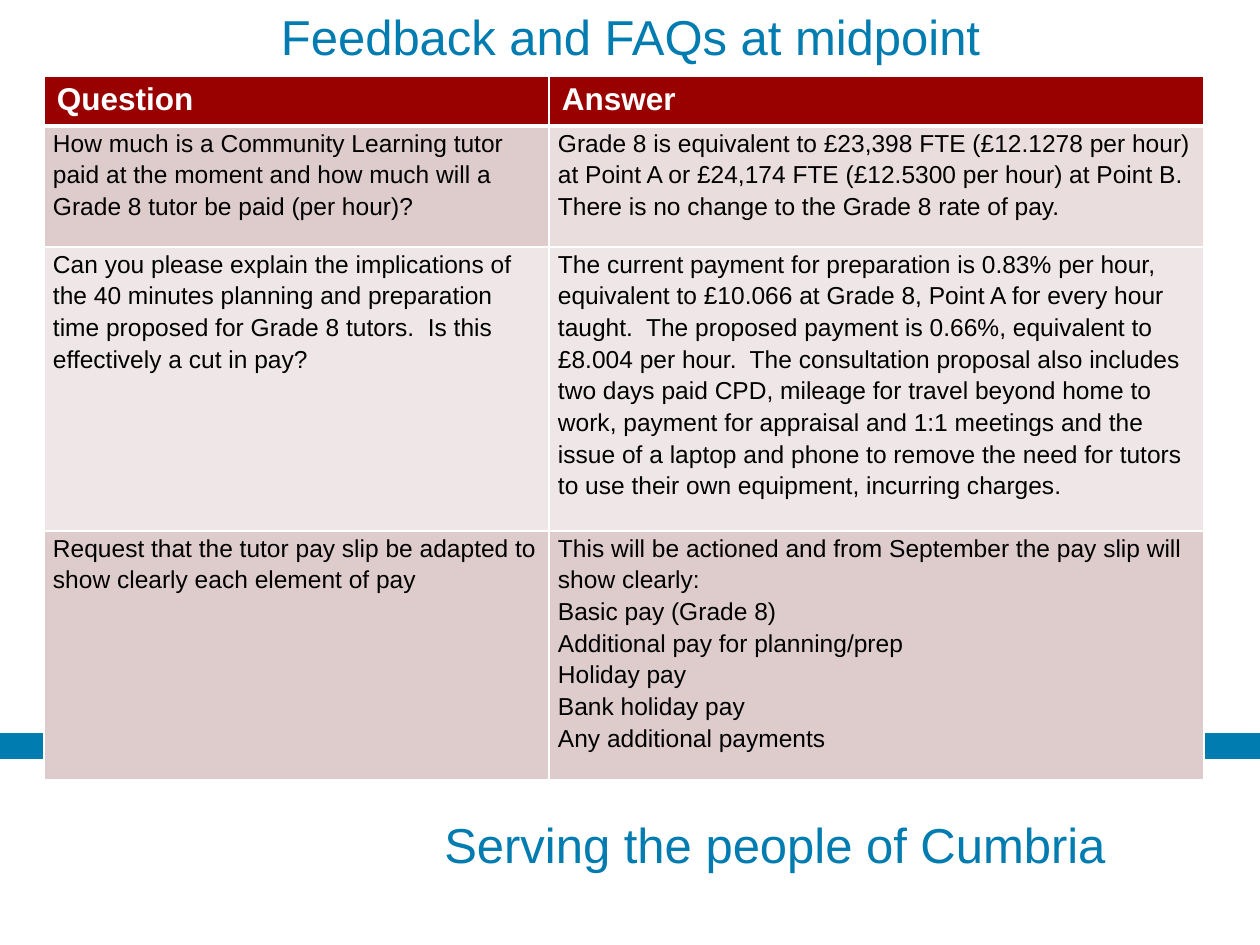
from dataclasses import dataclass

from lxml.etree import SubElement
from pptx import Presentation
from pptx.dml.color import RGBColor
from pptx.enum.shapes import MSO_CONNECTOR as Connector
from pptx.enum.text import MSO_ANCHOR as Anchor, PP_ALIGN as Align
from pptx.oxml.ns import qn
from pptx.util import Emu, Pt

# Content
TITLE = "Feedback and FAQs at midpoint"
STRAPLINE = "Serving the people of Cumbria"
HEADINGS = ("Question", "Answer")
FAQS = [
    (["How much is a Community Learning tutor paid at the moment and how much "
      "will a Grade 8 tutor be paid (per hour)?"],
     ["Grade 8 is equivalent to £23,398 FTE (£12.1278 per hour) at Point A or "
      "£24,174 FTE (£12.5300 per hour) at Point B.  There is no change to the "
      "Grade 8 rate of pay."]),
    (["Can you please explain the implications of the 40 minutes planning and "
      "preparation time proposed for Grade 8 tutors.  Is this effectively a cut in pay?"],
     ["The current payment for preparation is 0.83% per hour, equivalent to "
      "£10.066 at Grade 8, Point A for every hour taught.  The proposed payment "
      "is 0.66%, equivalent to £8.004 per hour.  The consultation proposal also "
      "includes two days paid CPD, mileage for travel beyond home to work, payment "
      "for appraisal and 1:1 meetings and the issue of a laptop and phone to remove "
      "the need for tutors to use their own equipment, incurring charges."]),
    (["Request that the tutor pay slip be adapted to show clearly each element of pay"],
     ["This will be actioned and from September the pay slip will show clearly:",
      "Basic pay (Grade 8)", "Additional pay for planning/prep", "Holiday pay",
      "Bank holiday pay", "Any additional payments"]),
]


@dataclass(frozen=True)
class Theme:
    font: str = "Arial"
    blue: str = "007CB0"
    white: str = "FFFFFF"
    black: str = "000000"
    header: str = "990000"
    rows: tuple = (("DECCCC", "EADDDD"), ("EFE7E7", "EFE7E7"), ("DECCCC", "DECCCC"))
    display: int = 28
    heading: int = 18
    body: int = 14


THEME = Theme()

# Layout in px
SLIDE = (1260, 945)
TITLE_BOX = (95, 6, 1071, 59)
STRAPLINE_BOX = (432, 808, 745, 72)
BAND_Y = 746
TABLE_AT = (44, 76)
COLUMNS = (505, 655)
ROWS = (50, 121, 284, 249)


def px(n):
    return Emu(round(n * 914400 / 126))


def add_text(paragraph, text, size, color, bold=False):
    run = paragraph.add_run()
    run.text = text
    font = run.font
    font.name, font.size, font.bold = THEME.font, Pt(size), bold
    font.color.rgb = RGBColor.from_string(color)


def set_borders(cell, bottom):
    props = cell._tc.get_or_add_tcPr()
    widths = {"a:lnL": 1, "a:lnR": 1, "a:lnT": 1, "a:lnB": bottom}
    for index, (side, width) in enumerate(widths.items()):
        line = props.makeelement(qn(side), {"w": str(Pt(width))})
        fill = SubElement(line, qn("a:solidFill"))
        SubElement(fill, qn("a:srgbClr"), val=THEME.white)
        props.insert(index, line)


def fill_cell(cell, paragraphs, fill, size, color, header=False):
    cell.fill.solid()
    cell.fill.fore_color.rgb = RGBColor.from_string(fill)
    cell.margin_left = cell.margin_right = px(13 if header else 9)
    cell.margin_top = cell.margin_bottom = px(6 if header else 0)
    frame = cell.text_frame
    for index, text in enumerate(paragraphs):
        paragraph = frame.add_paragraph() if index else frame.paragraphs[0]
        if not header:
            paragraph.line_spacing = 1.15
        add_text(paragraph, text, size, color, bold=header)
    set_borders(cell, bottom=3 if header else 1)


def main():
    prs = Presentation()
    prs.slide_width, prs.slide_height = map(px, SLIDE)
    slide = prs.slides.add_slide(prs.slide_layouts[5])
    shapes = slide.shapes

    # Title
    title = shapes.title
    title.left, title.top, title.width, title.height = map(px, TITLE_BOX)
    title.text_frame.vertical_anchor = Anchor.MIDDLE
    heading = title.text_frame.paragraphs[0]
    heading.alignment = Align.CENTER
    add_text(heading, TITLE, THEME.display, THEME.blue)

    # Blue band behind the table
    band = shapes.add_connector(Connector.STRAIGHT, px(SLIDE[0]), px(BAND_Y), 0, px(BAND_Y))
    band.line.color.rgb = RGBColor.from_string(THEME.blue)
    band.line.width = Pt(15)
    SubElement(band._element.spPr, qn("a:effectLst"))

    # Strapline
    strapline = shapes.add_textbox(*map(px, STRAPLINE_BOX)).text_frame
    strapline.word_wrap = True
    add_text(strapline.paragraphs[0], STRAPLINE, THEME.display, THEME.blue)

    # Question and answer table
    size = (sum(COLUMNS), sum(ROWS))
    table = shapes.add_table(len(ROWS), len(COLUMNS), *map(px, TABLE_AT + size)).table
    for column, width in zip(table.columns, COLUMNS):
        column.width = px(width)
    for row, height in zip(table.rows, ROWS):
        row.height = px(height)
    for c, text in enumerate(HEADINGS):
        fill_cell(table.cell(0, c), [text], THEME.header, THEME.heading, THEME.white, header=True)
    for r, (faq, fills) in enumerate(zip(FAQS, THEME.rows), start=1):
        for c, (paragraphs, fill) in enumerate(zip(faq, fills)):
            fill_cell(table.cell(r, c), paragraphs, fill, THEME.body, THEME.black)

    prs.save("out.pptx")


if __name__ == "__main__":
    main()
